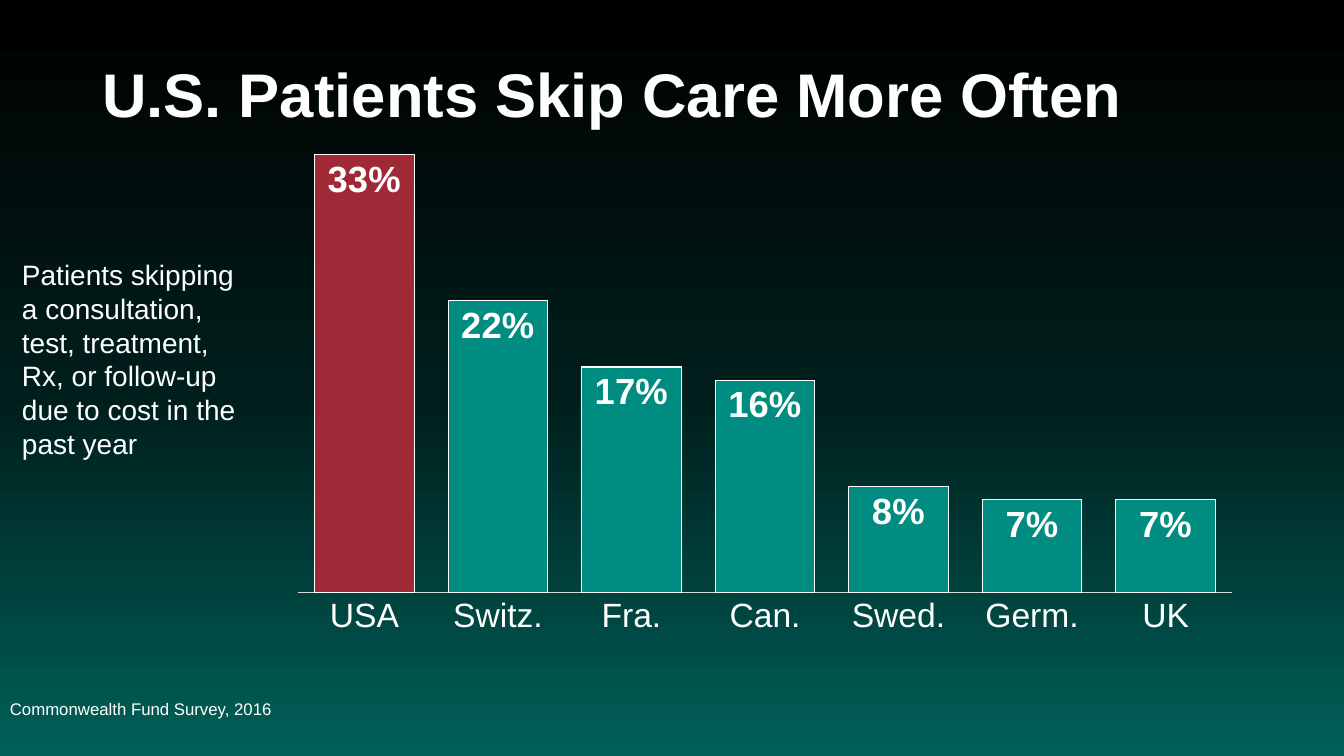
import copy

import pptx
import pptx.chart.data
import pptx.dml.color
import pptx.enum.chart
import pptx.enum.text
import pptx.oxml
import pptx.oxml.ns
import pptx.util

Pt = pptx.util.Pt
MIDDLE = pptx.enum.text.MSO_ANCHOR.MIDDLE
TOP = pptx.enum.text.MSO_ANCHOR.TOP

FONT = "Arial"
COLORS = {
    "text": "FFFFFF",
    "bar": "008C81",
    "highlight": "9F2936",
    "axis": "D9D9D9",
}
BACKGROUND_STOPS = [(0, "000000"), (0.52, "001E1C"), (1, "006059")]

# wording, (left, top, width, height), size, bold, anchor, line spacing
TEXTS = [
    ("U.S. Patients Skip Care More Often",
     (66, 17.3, 828, 104.4), 44, True, MIDDLE, 0.9),
    ("Commonwealth Fund Survey, 2016",
     (0, 473.8, 648, 66.2), 12, False, MIDDLE, 0.9),
    ("Patients skipping a consultation, test, treatment, Rx, or follow-up "
     "due to cost in the past year",
     (8.6, 180.7, 179.3, 152.6), 20, False, TOP, 1.0),
]

SKIPPED_CARE = {
    "USA": 0.33, "Switz.": 0.22, "Fra.": 0.17, "Can.": 0.16,
    "Swed.": 0.08, "Germ.": 0.07, "UK": 0.07,
}
HIGHLIGHTED = "USA"
CHART_BOX = (198.7, 93.6, 695.5, 366.5)
PLOT_SHARE = {"x": 0.02, "y": 0.02, "w": 0.96, "h": 0.88}


def rgb(hex_color):
    return pptx.dml.color.RGBColor.from_string(hex_color)


def style_font(font, size, bold=False):
    font.name = FONT
    font.size = Pt(size)
    font.bold = bold
    font.color.rgb = rgb(COLORS["text"])


def paint_background(slide):
    fill = slide.background.fill
    fill.gradient()
    fill.gradient_angle = 270
    stop_list = slide.element.find(".//" + pptx.oxml.ns.qn("a:gsLst"))
    while len(stop_list) < len(BACKGROUND_STOPS):
        stop_list.append(copy.deepcopy(stop_list[0]))
    for stop, (position, color) in zip(fill.gradient_stops, BACKGROUND_STOPS):
        stop.position = position
        stop.color.rgb = rgb(color)


def add_text(slide, wording, box, size, bold, anchor, line_spacing):
    frame = slide.shapes.add_textbox(*map(Pt, box)).text_frame
    frame.word_wrap = True
    frame.vertical_anchor = anchor
    paragraph = frame.paragraphs[0]
    paragraph.line_spacing = line_spacing
    run = paragraph.add_run()
    run.text = wording
    style_font(run.font, size, bold)


def paint_bar(bar_format, color):
    bar_format.fill.solid()
    bar_format.fill.fore_color.rgb = rgb(color)
    bar_format.line.color.rgb = rgb(COLORS["text"])
    bar_format.line.width = Pt(0.75)


def fix_plot_area(chart):
    """Pin the inner plot area to fixed shares of the chart box."""
    shares = "".join(f'<c:{key} val="{share}"/>' for key, share in PLOT_SHARE.items())
    layout = pptx.oxml.parse_xml(
        f'<c:layout {pptx.oxml.ns.nsdecls("c")}><c:manualLayout>'
        '<c:layoutTarget val="inner"/><c:xMode val="edge"/><c:yMode val="edge"/>'
        f'{shares}</c:manualLayout></c:layout>')
    plot_area = chart.element.find(".//" + pptx.oxml.ns.qn("c:plotArea"))
    for automatic in plot_area.findall(pptx.oxml.ns.qn("c:layout")):
        plot_area.remove(automatic)
    plot_area.insert(0, layout)


def add_skipped_care_chart(slide):
    countries = list(SKIPPED_CARE)
    data = pptx.chart.data.CategoryChartData(number_format="0%")
    data.categories = countries
    data.add_series("Series 1", SKIPPED_CARE.values())
    chart = slide.shapes.add_chart(
        pptx.enum.chart.XL_CHART_TYPE.COLUMN_CLUSTERED,
        *map(Pt, CHART_BOX), data).chart
    chart.has_legend = False
    chart.has_title = False
    style_font(chart.font, 24)
    fix_plot_area(chart)

    country_axis = chart.category_axis
    country_axis.major_tick_mark = pptx.enum.chart.XL_TICK_MARK.NONE
    country_axis.format.line.color.rgb = rgb(COLORS["axis"])
    country_axis.format.line.width = Pt(0.75)
    style_font(country_axis.tick_labels.font, 24)

    share_axis = chart.value_axis
    share_axis.minimum_scale = 0
    share_axis.maximum_scale = 0.34
    share_axis.major_unit = 0.1
    share_axis.has_major_gridlines = False
    share_axis.visible = False

    bars = chart.plots[0]
    bars.gap_width = 34
    bars.overlap = -27
    bars.vary_by_categories = False
    series = bars.series[0]
    paint_bar(series.format, COLORS["bar"])
    paint_bar(series.points[countries.index(HIGHLIGHTED)].format, COLORS["highlight"])

    labels = series.data_labels
    labels.show_value = True
    labels.number_format = "0%"
    labels.number_format_is_linked = False
    labels.position = pptx.enum.chart.XL_LABEL_POSITION.INSIDE_END
    style_font(labels.font, 26, bold=True)


def main():
    deck = pptx.Presentation()
    deck.slide_width = Pt(960)
    deck.slide_height = Pt(540)
    slide = deck.slides.add_slide(deck.slide_layouts[6])
    paint_background(slide)
    for text in TEXTS:
        add_text(slide, *text)
    add_skipped_care_chart(slide)
    deck.save("out.pptx")


if __name__ == "__main__":
    main()
